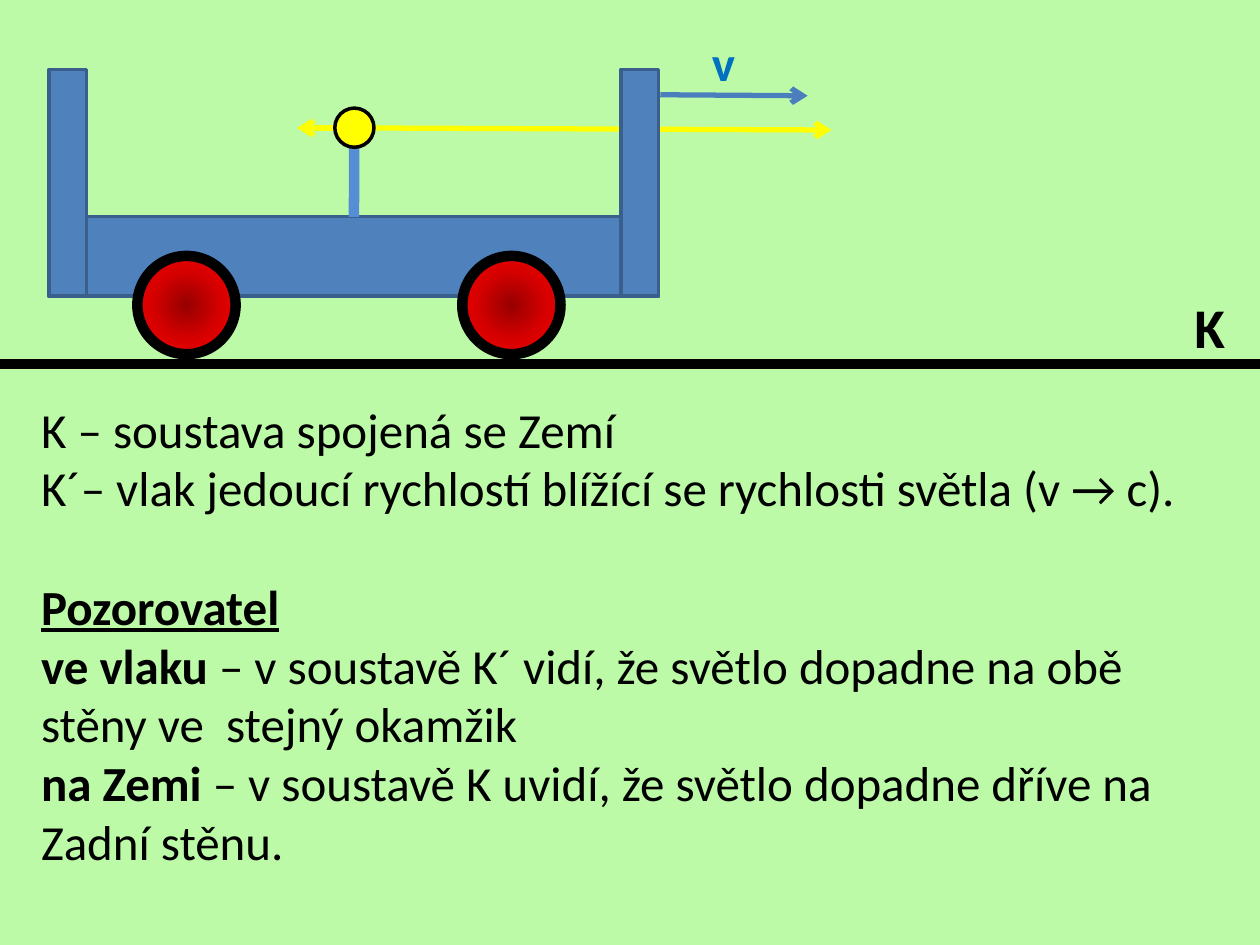
from dataclasses import dataclass
from typing import Optional

from lxml import etree
from pptx import Presentation
from pptx.dml.color import RGBColor
from pptx.enum.shapes import MSO_CONNECTOR, MSO_SHAPE
from pptx.oxml import parse_xml
from pptx.oxml.ns import nsdecls, qn
from pptx.util import Cm, Pt

RECT, OVAL = MSO_SHAPE.RECTANGLE, MSO_SHAPE.OVAL
STRAIGHT = MSO_CONNECTOR.STRAIGHT

GREEN = RGBColor(0xBD, 0xFA, 0xA8)
BLACK = RGBColor(0, 0, 0)
YELLOW = RGBColor(0xFF, 0xFF, 0)
STEEL = RGBColor(0x4F, 0x81, 0xBD)
EDGE = RGBColor(0x3A, 0x5F, 0x8C)
POST = RGBColor(0x55, 0x8E, 0xD5)
ARROW = RGBColor(0x4B, 0x7E, 0xBC)
BLUE = RGBColor(0, 0x70, 0xC0)
DARK = RGBColor(0x97, 0, 0)
MID = RGBColor(0xD7, 0, 0)
RED = RGBColor(0xFF, 0, 0)
FONT = "Calibri"


@dataclass
class Part:
    """A filled shape; lengths in cm. No fill colour means a red glow."""
    kind: int
    x: float
    y: float
    w: float
    h: float
    fill: Optional[RGBColor]
    edge: RGBColor
    width: float


@dataclass
class Line:
    """A straight line; lengths in cm."""
    x1: float
    y1: float
    x2: float
    y2: float
    color: RGBColor
    width: float
    head: bool = False


@dataclass
class Word:
    """A run of text."""
    text: str
    bold: bool = False
    under: bool = False


def glow(shape) -> None:
    stops = "".join(
        f'<a:gs pos="{pos}"><a:srgbClr val="{color}"/></a:gs>'
        for pos, color in ((0, DARK), (50000, MID), (100000, RED)))
    fill = parse_xml(
        f'<a:gradFill {nsdecls("a")} rotWithShape="1"><a:gsLst>{stops}</a:gsLst>'
        '<a:path path="circle"><a:fillToRect l="50000" t="50000" r="50000" '
        'b="50000"/></a:path></a:gradFill>')
    shape._element.spPr.find(qn("a:prstGeom")).addnext(fill)


def draw_part(shapes, part: Part):
    shape = shapes.add_shape(part.kind, Cm(part.x), Cm(part.y), Cm(part.w), Cm(part.h))
    shape.shadow.inherit = False
    if part.fill is None:
        glow(shape)
    else:
        shape.fill.solid()
        shape.fill.fore_color.rgb = part.fill
    shape.line.color.rgb = part.edge
    shape.line.width = Pt(part.width)
    return shape


def draw_line(shapes, line: Line):
    link = shapes.add_connector(
        STRAIGHT, Cm(line.x1), Cm(line.y1), Cm(line.x2), Cm(line.y2))
    link.line.color.rgb = line.color
    link.line.width = Pt(line.width)
    if line.head:
        etree.SubElement(link.line._get_or_add_ln(), qn("a:tailEnd"), type="arrow")
    etree.SubElement(link._element.spPr, qn("a:effectLst"))
    return link


def add_run(para, word: Word, size: float, color: RGBColor) -> None:
    run = para.add_run()
    run.text = word.text
    font = run.font
    font.name, font.size, font.bold = FONT, Pt(size), word.bold
    font.underline = word.under
    font.color.rgb = color


def add_box(shapes, x: float, y: float, w: float, h: float, wrap: bool = True):
    frame = shapes.add_textbox(Cm(x), Cm(y), Cm(w), Cm(h)).text_frame
    frame.word_wrap = wrap
    return frame


def main() -> None:
    deck = Presentation()
    deck.slide_width, deck.slide_height = Cm(25.4), Cm(19.05)
    slide = deck.slides.add_slide(deck.slide_layouts[6])
    slide.background.fill.solid()
    slide.background.fill.fore_color.rgb = GREEN
    shapes = slide.shapes

    # Explanation
    paras = [
        [Word("K – soustava spojená se Zemí")],
        [Word("K´– vlak jedoucí rychlostí blížící se rychlosti světla (v → c).")],
        [Word("Pozorovatel", True, True)],
        [Word("ve vlaku ", True),
         Word("– v soustavě K´ vidí, že světlo dopadne na obě stěny ve  stejný okamžik")],
        [Word("na Zemi ", True),
         Word("– v soustavě K\u00a0uvidí, že světlo dopadne dříve na Zadní stěnu.")],
    ]
    frame = add_box(shapes, 0.58, 7.92, 24.2, 10.52)
    for i, words in enumerate(paras):
        para = frame.paragraphs[0] if i == 0 else frame.add_paragraph()
        if i == 2:
            para.space_before = Pt(34)
        for word in words:
            add_run(para, word, 28, BLACK)

    # Ground and its frame of reference
    draw_line(shapes, Line(0, 7.34, 25.4, 7.34, BLACK, 6))
    frame = add_box(shapes, 23.83, 5.77, 1.14, 1.62, wrap=False)
    add_run(frame.paragraphs[0], Word("K", True), 32, BLACK)

    # Light rays, behind the car
    draw_line(shapes, Line(7.47, 2.58, 16.76, 2.62, YELLOW, 3, True))
    draw_line(shapes, Line(6.78, 2.58, 5.99, 2.58, YELLOW, 3, True))

    # Car: floor, walls and wheels
    car = shapes.add_group_shape().shapes
    floor = draw_part(car, Part(RECT, 0.99, 4.37, 12.29, 1.6, STEEL, EDGE, 2))
    for x in (0.99, 12.52):
        draw_part(car, Part(RECT, x, 1.4, 0.76, 4.57, STEEL, EDGE, 2))
    for x in (2.77, 9.32):
        draw_part(car, Part(OVAL, x, 5.16, 1.98, 1.98, None, BLACK, 6))

    # Lamp on its post
    post = draw_line(car, Line(7.14, 4.37, 7.14, 2.97, POST, 6))
    post.begin_connect(floor, 0)
    draw_part(car, Part(OVAL, 6.75, 2.18, 0.79, 0.79, YELLOW, BLACK, 2))

    # Speed of the car
    draw_line(car, Line(13.31, 1.91, 16.28, 1.93, ARROW, 3, True))
    frame = add_box(car, 14.1, 0.53, 1.4, 1.45)
    add_run(frame.paragraphs[0], Word("v", True), 28, BLUE)

    deck.save("out.pptx")


if __name__ == "__main__":
    main()
